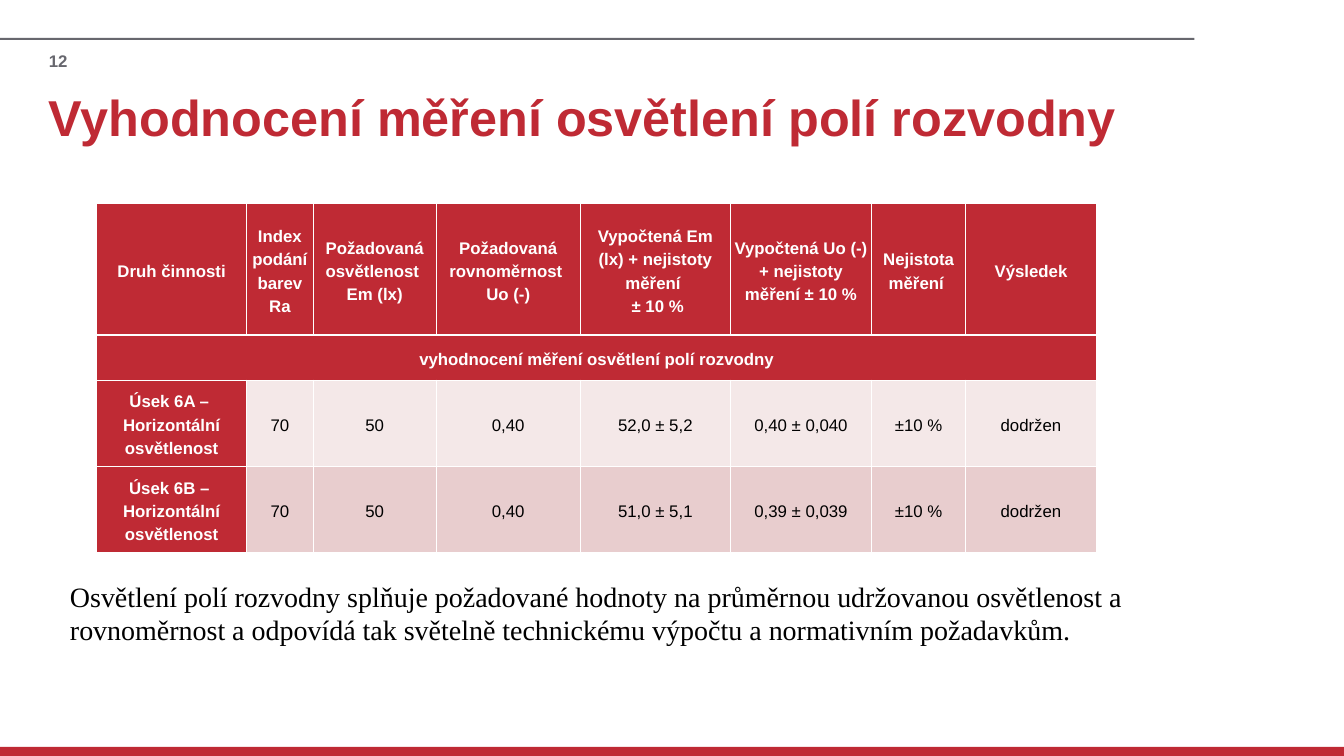
from dataclasses import dataclass

from lxml.etree import SubElement
from pptx import Presentation
from pptx.dml.color import RGBColor
from pptx.enum.shapes import MSO_SHAPE as Preset
from pptx.enum.text import MSO_ANCHOR as Anchor, PP_ALIGN as Align
from pptx.oxml.ns import qn
from pptx.util import Inches, Pt

RED, GREY, WHITE, BLACK = "BF2A34", "67676E", "FFFFFF", "000000"
ROW_TINTS = ["F4E8E8", "E8CDCE"]


@dataclass
class Box:
    left: float
    top: float
    width: float
    height: float

    def lengths(self) -> list:
        return [Inches(v) for v in (self.left, self.top, self.width, self.height)]


@dataclass
class Style:
    size: float
    color: str
    bold: bool = False
    name: str = "Arial"


def rgb(color: str) -> RGBColor:
    return RGBColor.from_string(color)


def write(frame, text: str, style: Style, **paragraph_format) -> None:
    """Fill a text frame, one paragraph per line."""
    frame.text = text
    for paragraph in frame.paragraphs:
        for key, value in paragraph_format.items():
            setattr(paragraph, key, value)
        for run in paragraph.runs:
            font_values = {"size": Pt(style.size), "bold": style.bold, "name": style.name}
            for key, value in font_values.items():
                setattr(run.font, key, value)
            run.font.color.rgb = rgb(style.color)


def set_margins(target, left: float, top: float, right: float, bottom: float) -> None:
    margins = {"left": left, "top": top, "right": right, "bottom": bottom}
    for side, value in margins.items():
        setattr(target, f"margin_{side}", Inches(value))


def add_bar(slide, box: Box, color: str) -> None:
    bar = slide.shapes.add_shape(Preset.RECTANGLE, *box.lengths())
    bar.shadow.inherit = False
    bar.fill.solid()
    bar.fill.fore_color.rgb = rgb(color)
    bar.line.fill.background()


def add_text(slide, box: Box, text: str, style: Style):
    frame = slide.shapes.add_textbox(*box.lengths()).text_frame
    frame.word_wrap = True
    write(frame, text, style)
    return frame


def set_borders(cell, top: float = 1, bottom: float = 1) -> None:
    properties = cell._tc.get_or_add_tcPr()
    for tag, points in {"lnL": 1, "lnR": 1, "lnT": top, "lnB": bottom}.items():
        line = SubElement(properties, qn(f"a:{tag}"), w=str(Pt(points)))
        SubElement(SubElement(line, qn("a:solidFill")), qn("a:srgbClr"), val=WHITE)


def format_cell(cell, text: str, fill: str, style: Style, **borders) -> None:
    set_borders(cell, **borders)
    cell.fill.solid()
    cell.fill.fore_color.rgb = rgb(fill)
    cell.vertical_anchor = Anchor.MIDDLE
    set_margins(cell, 0.05, 0, 0.05, 0)
    write(cell.text_frame, text, style, alignment=Align.CENTER, line_spacing=1.25)


# Table content
COLUMN_WIDTHS = [2.97, 1.33, 2.43, 2.87, 2.97, 2.81, 1.86, 2.6]
ROW_HEIGHTS = [2.61, 0.89, 1.71, 1.71]
HEADINGS = [
    "Druh činnosti",
    "Index podání barev Ra",
    "Požadovaná osvětlenost \nEm (lx)",
    "Požadovaná rovnoměrnost \nUo (-)",
    "Vypočtená Em (lx) + nejistoty měření \n ± 10 %",
    "Vypočtená Uo (-) + nejistoty měření ± 10 %",
    "Nejistota měření ",
    "Výsledek",
]
SECTION = "vyhodnocení měření osvětlení polí rozvodny"
MEASUREMENTS = [
    ["Úsek 6A – \nHorizontální osvětlenost", "70", "50", "0,40",
     "52,0 ± 5,2", "0,40 ± 0,040", "±10 %", "dodržen"],
    ["Úsek 6B – \nHorizontální osvětlenost", "70", "50", "0,40",
     "51,0 ± 5,1", "0,39 ± 0,039", "±10 %", "dodržen"],
]
HEADING_STYLE = Style(24, WHITE, bold=True)
VALUE_STYLE = Style(24, BLACK)


def add_results(slide, box: Box) -> None:
    results = slide.shapes.add_table(
        len(ROW_HEIGHTS), len(COLUMN_WIDTHS), *box.lengths()).table
    for column, width in zip(results.columns, COLUMN_WIDTHS):
        column.width = Inches(width)
    for row, height in zip(results.rows, ROW_HEIGHTS):
        row.height = Inches(height)

    # Headings and the section row across all columns
    for c, heading in enumerate(HEADINGS):
        format_cell(results.cell(0, c), heading, RED, HEADING_STYLE, bottom=3)
        format_cell(results.cell(1, c), "" if c else SECTION, RED, HEADING_STYLE, top=3)
    results.cell(1, 0).merge(results.cell(1, len(HEADINGS) - 1))

    # Measured sections
    for r, (values, tint) in enumerate(zip(MEASUREMENTS, ROW_TINTS), start=2):
        for c, value in enumerate(values):
            fill, style = (tint, VALUE_STYLE) if c else (RED, HEADING_STYLE)
            format_cell(results.cell(r, c), value, fill, style)


def main() -> None:
    deck = Presentation()
    deck.slide_width, deck.slide_height = Inches(26.67), Inches(15)
    slide = deck.slides.add_slide(deck.slide_layouts[5])

    # Page bars
    add_bar(slide, Box(0, 14.82, 26.67, 0.18), RED)
    add_bar(slide, Box(0, 0.75, 23.7, 0.04), GREY)

    # Title
    title = slide.shapes.title
    title.left, title.top, title.width, title.height = Box(0.97, 1.73, 24.72, 2.8).lengths()
    title.text_frame.vertical_anchor = Anchor.TOP
    set_margins(title.text_frame, 0, 0.12, 0, 0)
    write(title.text_frame, "Vyhodnocení měření osvětlení polí rozvodny",
          Style(72, RED, bold=True), alignment=Align.LEFT, line_spacing=0.9)

    add_results(slide, Box(1.92, 4.04, sum(COLUMN_WIDTHS), sum(ROW_HEIGHTS)))

    # Page number and conclusion
    page_number = add_text(slide, Box(0.97, 1.01, 1.18, 0.39), "12",
                           Style(24, GREY, bold=True))
    set_margins(page_number, 0, 0, 0, 0)
    add_text(slide, Box(1.29, 11.44, 22.84, 1.45),
             "Osvětlení polí rozvodny splňuje požadované hodnoty na průměrnou "
             "udržovanou osvětlenost a rovnoměrnost a odpovídá tak světelně "
             "technickému výpočtu a normativním požadavkům.",
             Style(40, BLACK, name="Times New Roman"))

    deck.save("out.pptx")


if __name__ == "__main__":
    main()
